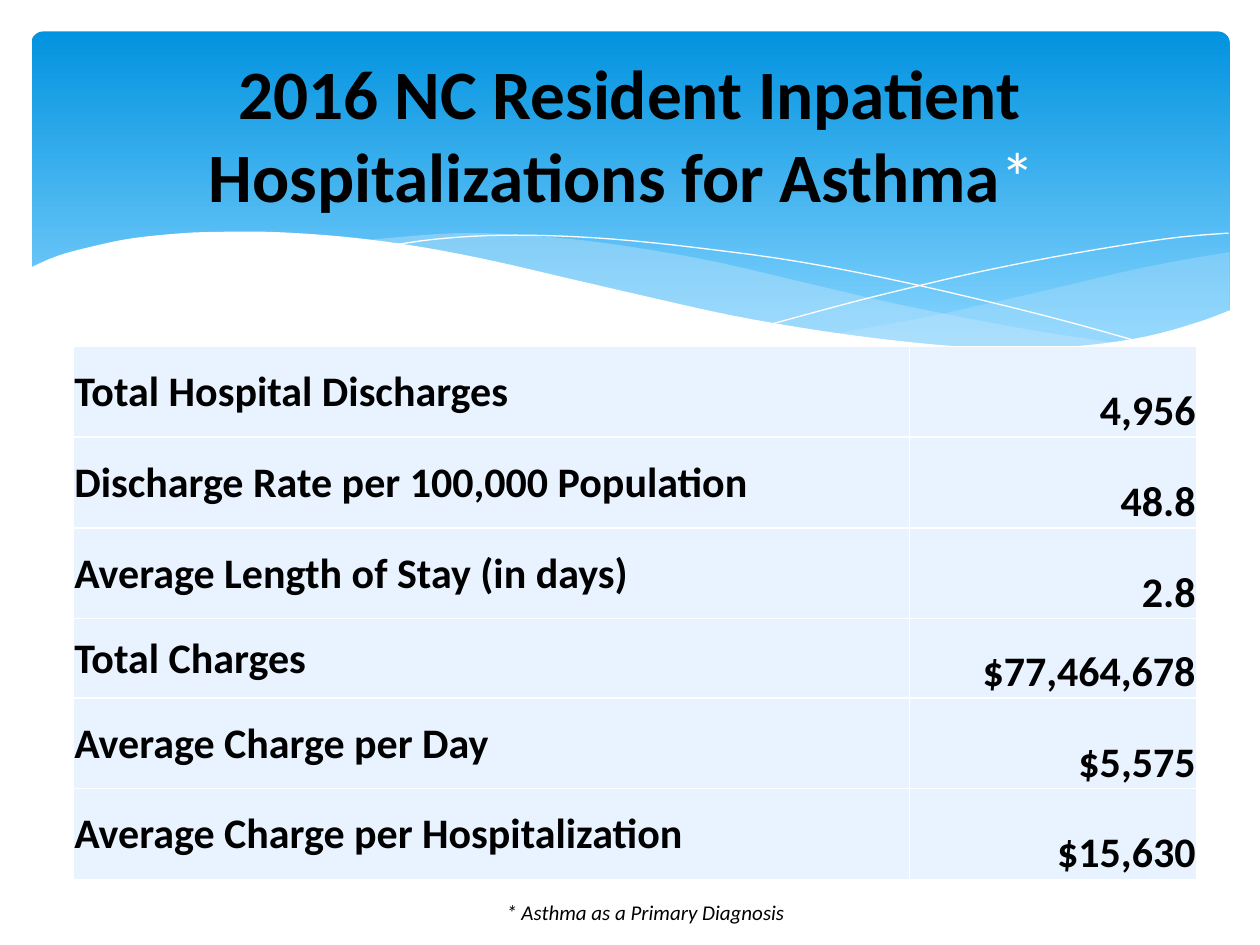
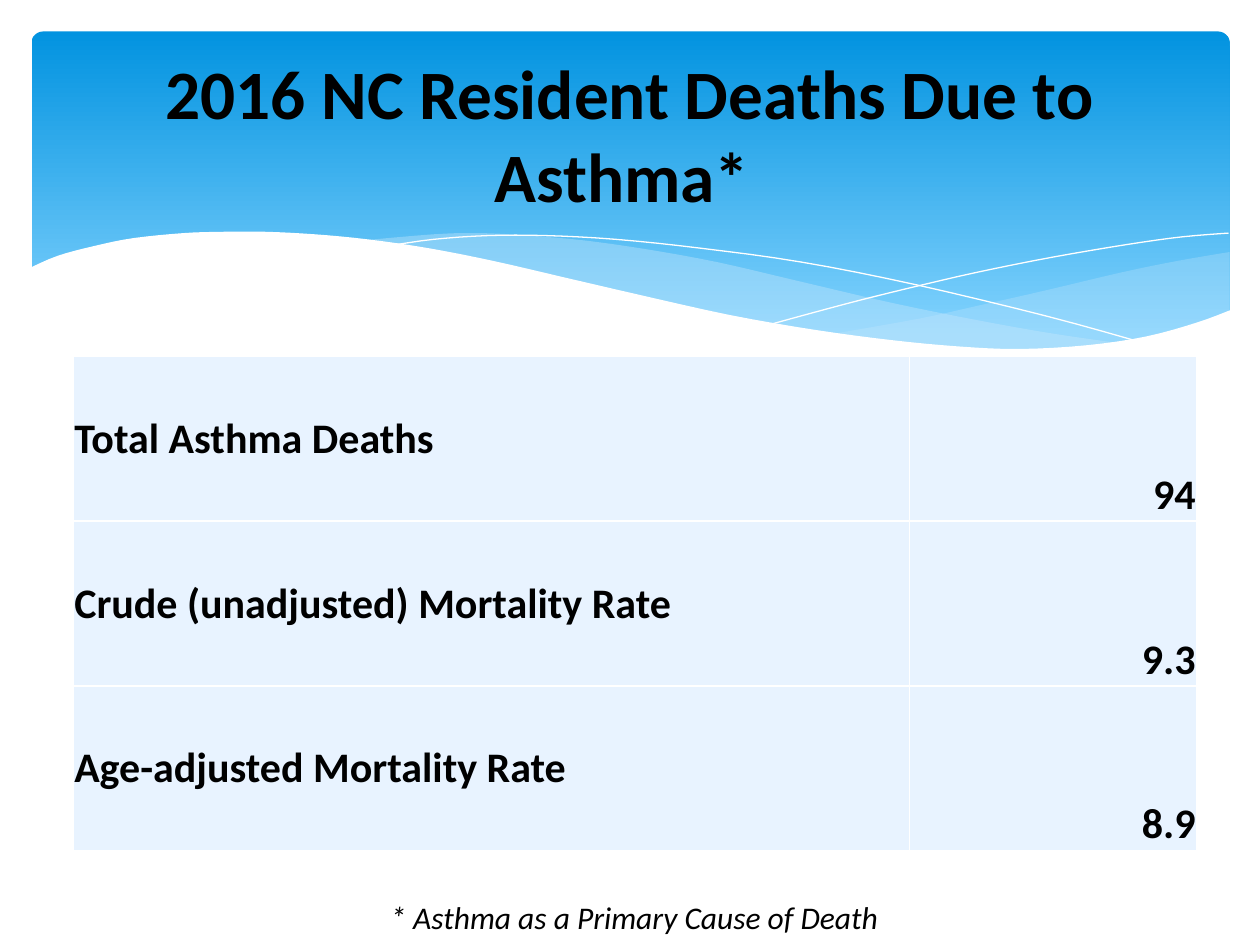
from itertools import product

from lxml import etree
from pptx import Presentation
from pptx.dml.color import RGBColor
from pptx.enum.shapes import MSO_SHAPE
from pptx.enum.text import MSO_ANCHOR, MSO_AUTO_SIZE, PP_ALIGN
from pptx.oxml.ns import qn
from pptx.util import Inches, Pt

LEFT, CENTER, RIGHT = PP_ALIGN.LEFT, PP_ALIGN.CENTER, PP_ALIGN.RIGHT
TOP, MIDDLE, BOTTOM = MSO_ANCHOR.TOP, MSO_ANCHOR.MIDDLE, MSO_ANCHOR.BOTTOM
ROUNDED = MSO_SHAPE.ROUNDED_RECTANGLE
GROW = MSO_AUTO_SIZE.SHAPE_TO_FIT_TEXT

BLACK, WHITE = "000000", "FFFFFF"
SKY_TOP, SKY_BOTTOM = "0293E0", "83D3FE"
WAVE, CELL = "C6E7FC", "E8F3FF"

TITLE = {"name": "Calibri", "size": Pt(39.6), "bold": True}
FIGURE = {"name": "Calibri", "size": Pt(24), "bold": True}
NOTE = {"name": "Calibri", "italic": True}

SLIDES = [
    {
        "title": [("2016 NC Resident Inpatient Hospitalizations for Asthma", TITLE, BLACK),
                  ("* ", TITLE | {"bold": False}, WHITE)],
        "rows": [("Total Hospital Discharges", "4,956"),
                 ("Discharge Rate per 100,000 Population", "48.8"),
                 ("Average Length of Stay (in days)", "2.8"),
                 ("Total Charges", "$77,464,678"),
                 ("Average Charge per Day", "$5,575"),
                 ("Average Charge per Hospitalization", "$15,630")],
        "table_top": 2.75,
        "heights": [0.72, 0.72, 0.72, 0.63, 0.72, 0.72],
        "note": [("* Asthma as a Primary Diagnosis", NOTE | {"size": Pt(12)}, BLACK)],
        "note_box": (3.92, 7.09, 2.42, 0.3),
    },
    {
        "title": [("2016 NC Resident Deaths Due to Asthma* ", TITLE, BLACK)],
        "rows": [("Total Asthma Deaths", "94"),
                 ("Crude (unadjusted) Mortality Rate", "9.3"),
                 ("Age-adjusted Mortality Rate", "8.9")],
        "table_top": 2.83,
        "heights": [3.92 / 3] * 3,
        "note": [("* Asthma as a Primary Cause of Death", NOTE | {"size": Pt(18)}, BLACK)],
        "note_box": (3, 7.08, 4.08, 0.4),
    },
]
TABLE_LEFT, COLUMNS = 0.58, (6.64, 2.28)
COLUMN_PLACES = [(LEFT, MIDDLE), (RIGHT, BOTTOM)]
CELL_MARGINS = {"margin_left": 0.01, "margin_right": 0.01, "margin_top": 0.01, "margin_bottom": 0}

# Each wave is a list of smooth edges given by their knots; edges meet in corners.
RIGHT_SWELL = [
    [(9.76, 2), (9.35, 2.07), (8.91, 2.16), (8.32, 2.3), (7.79, 2.42), (7.29, 2.53), (6.61, 2.65)],
    [(6.61, 2.65), (7.05, 2.71), (7.45, 2.75), (7.81, 2.77), (8.14, 2.78), (8.54, 2.76),
     (8.89, 2.72), (9.21, 2.65), (9.49, 2.57), (9.76, 2.47)],
]
LONG_SWELL = [
    [(8.93, 2.73), (8.37, 2.65), (7.75, 2.54), (7.06, 2.4), (6.29, 2.22), (5.69, 2.08),
     (5.14, 1.98), (4.65, 1.91), (4.2, 1.87), (3.8, 1.85), (3.44, 1.86), (2.86, 1.91)],
    [(2.86, 1.91), (3.42, 1.99), (4.04, 2.11), (4.49, 2.22), (5.3, 2.4), (6.01, 2.55),
     (6.5, 2.64), (6.95, 2.7), (7.36, 2.75), (7.73, 2.77), (8.07, 2.78), (8.48, 2.77),
     (8.93, 2.73)],
]
FALLING_LINE = [
    [(3.09, 1.95), (3.44, 1.9), (3.87, 1.87), (4.33, 1.87), (4.89, 1.9), (5.56, 1.97),
     (6.36, 2.08), (7.27, 2.26), (8.31, 2.51), (9.07, 2.72)],
]
RISING_LINE = [
    [(6.13, 2.57), (6.72, 2.41), (7.2, 2.29), (7.76, 2.16), (8.36, 2.04), (8.95, 1.94),
     (9.38, 1.88), (9.75, 1.85)],
]
WHITE_WAVE = [
    [(9.77, 2.46), (9.5, 2.56), (9.1, 2.67), (8.63, 2.74), (8.09, 2.77), (7.61, 2.75),
     (7.08, 2.7), (6.48, 2.62), (5.79, 2.5), (5.03, 2.33), (4.47, 2.2), (3.91, 2.07),
     (3.4, 1.97), (2.92, 1.9), (2.5, 1.86), (2.11, 1.84), (1.77, 1.84), (1.46, 1.85),
     (1.06, 1.89), (0.76, 1.95), (0.46, 2.03), (0.23, 2.13)],
    [(0.23, 3.29), (9.77, 3.29)],
]
# edges, fill, opacity in percent
SWELLS = [(RIGHT_SWELL, WAVE, 29), (LONG_SWELL, WAVE, 40)]
CREST_LINES = [FALLING_LINE, RISING_LINE]


def rgb(value):
    return RGBColor.from_string(value)


def inches(*lengths):
    return [Inches(length) for length in lengths]


def smooth(knots, steps=4):
    """Return points on a Catmull-Rom curve through the knots."""
    if len(knots) < 3:
        return knots
    padded = [knots[0], *knots, knots[-1]]
    points = [knots[0]]
    for a, b, c, d in zip(padded, padded[1:], padded[2:], padded[3:]):
        for step in range(1, steps + 1):
            t = step / steps
            points.append(tuple(
                q + t / 2 * (r - p + t * (2*p - 5*q + 4*r - s + t * (3*q - p - 3*r + s)))
                for p, q, r, s in zip(a, b, c, d)))
    return points


def add_wave(slide, edges, closed):
    start, *rest = [inches(*point) for edge in edges for point in smooth(edge)]
    builder = slide.shapes.build_freeform(*start)
    builder.add_line_segments(rest, close=closed)
    wave = builder.convert_to_shape()
    wave.shadow.inherit = False
    return wave


def add_filled_wave(slide, edges, color, opacity=100):
    wave = add_wave(slide, edges, True)
    wave.line.fill.background()
    wave.fill.solid()
    wave.fill.fore_color.rgb = rgb(color)
    if opacity < 100:
        tint = wave.fill._xPr.find(qn("a:solidFill"))[0]
        etree.SubElement(tint, qn("a:alpha"), val=str(opacity * 1000))


def add_band(slide):
    sky = slide.shapes.add_shape(ROUNDED, *inches(0.25, 0.25, 9.51, 2.7))
    sky.adjustments[0] = 0.034
    sky.shadow.inherit = False
    sky.line.fill.background()
    sky.fill.gradient()
    sky.fill.gradient_angle = 270
    for stop, color, position in zip(sky.fill.gradient_stops, (SKY_TOP, SKY_BOTTOM), (0, 0.9)):
        stop.color.rgb = rgb(color)
        stop.position = position

    for edges, color, opacity in SWELLS:
        add_filled_wave(slide, edges, color, opacity)
    for edges in CREST_LINES:
        crest = add_wave(slide, edges, False)
        crest.fill.background()
        crest.line.color.rgb = rgb(WHITE)
        crest.line.width = Pt(0)
    add_filled_wave(slide, WHITE_WAVE, WHITE)


def write(frame, runs, align):
    paragraph = frame.paragraphs[0]
    paragraph.alignment = align
    for text, style, color in runs:
        run = paragraph.add_run()
        run.text = text
        for attribute, value in style.items():
            setattr(run.font, attribute, value)
        run.font.color.rgb = rgb(color)


def add_text(slide, box, runs, align, anchor, wrap):
    frame = slide.shapes.add_textbox(*inches(*box)).text_frame
    frame.word_wrap = wrap
    frame.vertical_anchor = anchor
    if not wrap:
        frame.auto_size = GROW
    write(frame, runs, align)


def add_borders(cell):
    properties = cell._tc.get_or_add_tcPr()
    for side in "LRTB":
        border = etree.SubElement(properties, qn(f"a:ln{side}"), w=str(Pt(1)))
        fill = etree.SubElement(border, qn("a:solidFill"))
        etree.SubElement(fill, qn("a:srgbClr"), val=WHITE)


def add_figures(slide, rows, top, heights):
    box = inches(TABLE_LEFT, top, sum(COLUMNS), sum(heights))
    table = slide.shapes.add_table(len(rows), len(COLUMNS), *box).table
    table.first_row = table.horz_banding = False
    for column, width in zip(table.columns, COLUMNS):
        column.width = Inches(width)
    for row, height in zip(table.rows, heights):
        row.height = Inches(height)
    for r, c in product(range(len(rows)), range(len(COLUMNS))):
        cell = table.cell(r, c)
        align, cell.vertical_anchor = COLUMN_PLACES[c]
        for attribute, margin in CELL_MARGINS.items():
            setattr(cell, attribute, Inches(margin))
        add_borders(cell)
        cell.fill.solid()
        cell.fill.fore_color.rgb = rgb(CELL)
        write(cell.text_frame, [(rows[r][c], FIGURE, BLACK)], align)


def main():
    deck = Presentation()
    deck.slide_width, deck.slide_height = inches(10, 7.5)
    blank = deck.slide_layouts[6]
    for content in SLIDES:
        slide = deck.slides.add_slide(blank)
        add_band(slide)
        add_figures(slide, content["rows"], content["table_top"], content["heights"])
        add_text(slide, (0.5, 0.37, 9, 1.37), content["title"], CENTER, MIDDLE, True)
        add_text(slide, content["note_box"], content["note"], LEFT, TOP, False)
    deck.save("out.pptx")


if __name__ == "__main__":
    main()
